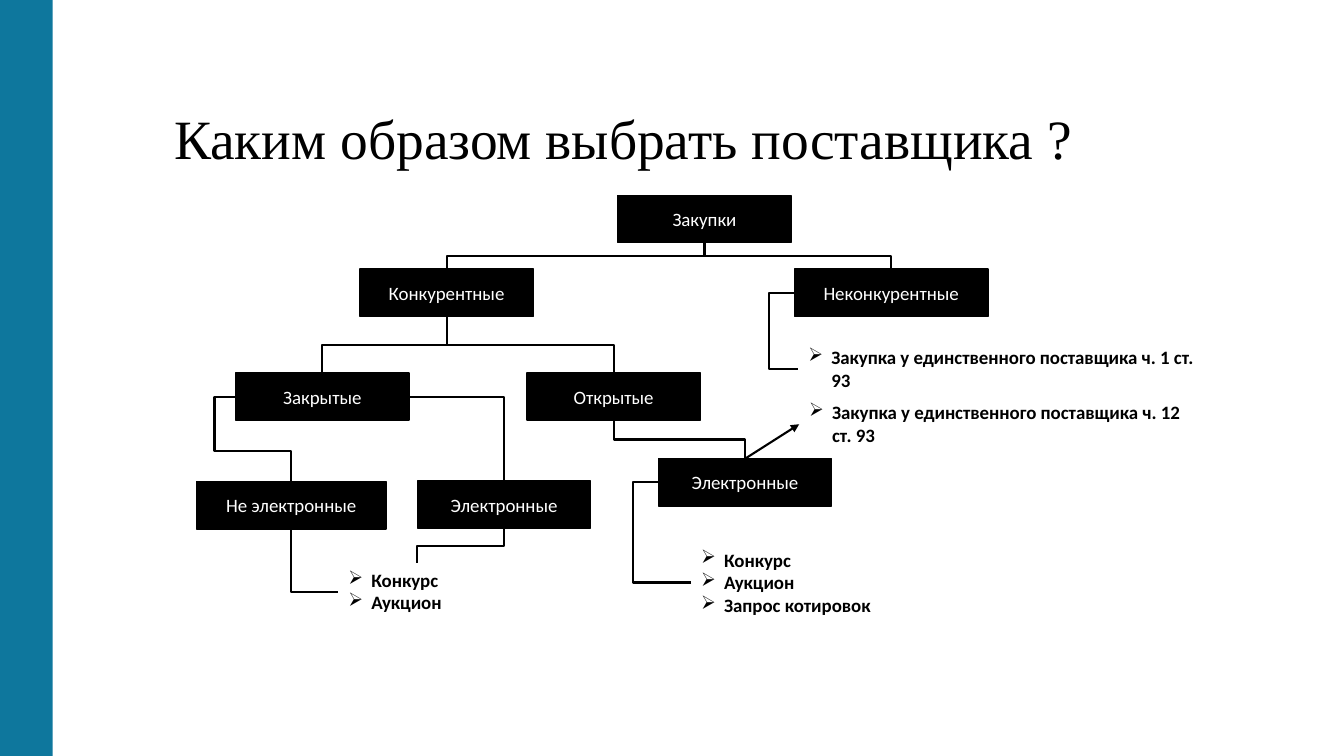
from lxml import etree
from pptx import Presentation
from pptx.dml.color import RGBColor
from pptx.enum.shapes import MSO_CONNECTOR, MSO_SHAPE
from pptx.enum.text import MSO_ANCHOR, PP_ALIGN
from pptx.oxml.ns import qn
from pptx.util import Cm, Pt

BLACK = RGBColor(0x00, 0x00, 0x00)
WHITE = RGBColor(0xFF, 0xFF, 0xFF)
TEAL = RGBColor(0x0E, 0x77, 0x9D)
RECTANGLE = MSO_SHAPE.RECTANGLE
ELBOW, STRAIGHT = MSO_CONNECTOR.ELBOW, MSO_CONNECTOR.STRAIGHT
MIDDLE, CENTER = MSO_ANCHOR.MIDDLE, PP_ALIGN.CENTER

BOX_HEIGHT = 1.19
BULLET_INDENT = Cm(0.58)
TITLE_FONT = {"name": "Times New Roman", "size": Pt(39.6)}
BOX_FONT = {"name": "Calibri", "size": Pt(13.5)}
LIST_FONT = {"name": "Calibri", "size": Pt(13.5), "bold": True}

# key: (text, left, top, width)
BOXES = {
    "purchases": ("Закупки", 15.57, 4.93, 4.37),
    "competitive": ("Конкурентные", 9.07, 6.78, 4.37),
    "noncompetitive": ("Неконкурентные", 20.02, 6.78, 4.88),
    "closed": ("Закрытые", 5.94, 9.4, 4.37),
    "open": ("Открытые", 13.28, 9.4, 4.37),
    "closed paper": ("Не электронные", 4.95, 12.14, 4.78),
    "closed electronic": ("Электронные", 10.52, 12.12, 4.37),
    "open electronic": ("Электронные", 16.59, 11.56, 4.37),
}
# key: (items, left, top, width, height)
LISTS = {
    "closed methods": (["Конкурс", "Аукцион"], 8.53, 14.2, 3.94, 1.42),
    "open methods": (["Конкурс", "Аукцион", "Запрос котировок"], 17.42, 13.69, 7.16, 1.98),
    "part 1": (["Закупка у единственного поставщика ч. 1 ст. 93"], 20.12, 8.59, 10.39, 1.42),
    "part 12": (["Закупка у единственного поставщика ч. 12 ст. 93"], 20.14, 9.98, 10.39, 1.42),
}
# from, side, to, side, preset, leaves vertically, bend positions
ELBOWS = [
    ("purchases", "bottom", "competitive", "top", "bentConnector3", True, [0.5]),
    ("purchases", "bottom", "noncompetitive", "top", "bentConnector3", True, [0.5]),
    ("competitive", "bottom", "closed", "top", "bentConnector3", True, [0.5]),
    ("competitive", "bottom", "open", "top", "bentConnector3", True, [0.5]),
    ("open", "bottom", "open electronic", "top", "bentConnector3", True, [0.5]),
    ("closed electronic", "bottom", "closed methods", "top", "bentConnector3", True, [0.5]),
    ("closed electronic", "top", "closed", "right", "bentConnector2", True, []),
    ("closed paper", "bottom", "closed methods", "left", "bentConnector2", True, []),
    ("closed paper", "top", "closed", "left", "bentConnector4", True, [0.36, 1.38]),
    ("open methods", "left", "open electronic", "left", "bentConnector3", False, [1.76]),
    ("noncompetitive", "left", "part 1", "left", "bentConnector3", False, [-6.35]),
]


def write(paragraph, text, color, font_format):
    run = paragraph.add_run()
    run.text = text
    run.font.color.rgb = color
    for attribute, value in font_format.items():
        setattr(run.font, attribute, value)


def draw_line(kind, start, end, vertical=False):
    """Add a black connector; a vertical one is laid out on its side and turned by 90°."""
    (x1, y1), (x2, y2) = start, end
    if vertical:
        cx, cy, dx, dy = (x1 + x2) / 2, (y1 + y2) / 2, x2 - x1, y2 - y1
        x1, y1, x2, y2 = cx - dy / 2, cy + dx / 2, cx + dy / 2, cy - dx / 2
    line = slide.shapes.add_connector(kind, *(Cm(v) for v in (x1, y1, x2, y2)))
    line.line.color.rgb = BLACK
    line.line.width = Pt(1.5)
    properties = line._element.spPr
    etree.SubElement(properties, qn("a:effectLst"))
    if vertical:
        properties.find(qn("a:xfrm")).set("rot", "5400000")
    return line


prs = Presentation()
prs.slide_width, prs.slide_height = Cm(33.87), Cm(19.05)
slide = prs.slides.add_slide(prs.slide_layouts[6])

side_band = slide.shapes.add_shape(RECTANGLE, 0, 0, Cm(1.33), prs.slide_height)
side_band.shadow.inherit = False
side_band.fill.solid()
side_band.fill.fore_color.rgb = TEAL
side_band.line.fill.background()

title = slide.shapes.add_textbox(Cm(4.14), Cm(2.77), Cm(26.09), Cm(1.7)).text_frame
title.word_wrap = True
title.vertical_anchor = MIDDLE
title.paragraphs[0].line_spacing = 0.8
write(title.paragraphs[0], "Каким образом выбрать поставщика ?", BLACK, TITLE_FONT)

# Points where lines meet the boxes and lists
anchors = {}
areas = {key: (left, top, width, BOX_HEIGHT) for key, (_, left, top, width) in BOXES.items()}
areas.update({key: tuple(area) for key, (_, *area) in LISTS.items()})
for key, (left, top, width, height) in areas.items():
    anchors[key] = {
        "top": (left + width / 2, top),
        "bottom": (left + width / 2, top + height),
        "left": (left, top + height / 2),
        "right": (left + width, top + height / 2),
    }

for source, source_side, target, target_side, preset, vertical, bends in ELBOWS:
    elbow = draw_line(ELBOW, anchors[source][source_side], anchors[target][target_side], vertical)
    geometry = elbow._element.spPr.find(qn("a:prstGeom"))
    geometry.set("prst", preset)
    adjustments = geometry.find(qn("a:avLst"))
    for number, bend in enumerate(bends, 1):
        etree.SubElement(adjustments, qn("a:gd"), name=f"adj{number}",
                         fmla=f"val {round(bend * 100000)}")

arrow = draw_line(STRAIGHT, anchors["open electronic"]["top"], anchors["part 12"]["left"])
etree.SubElement(arrow.line._get_or_add_ln(), qn("a:tailEnd"), type="triangle")

for key, (text, *_) in BOXES.items():
    box = slide.shapes.add_shape(RECTANGLE, *(Cm(v) for v in areas[key]))
    box.shadow.inherit = False
    box.fill.solid()
    box.fill.fore_color.rgb = BLACK
    box.line.color.rgb = BLACK
    box.line.width = Pt(1)
    box.text_frame.word_wrap = True
    box.text_frame.vertical_anchor = MIDDLE
    box.text_frame.paragraphs[0].alignment = CENTER
    write(box.text_frame.paragraphs[0], text, WHITE, BOX_FONT)

for key, (items, *_) in LISTS.items():
    frame = slide.shapes.add_textbox(*(Cm(v) for v in areas[key])).text_frame
    frame.word_wrap = True
    for index, item in enumerate(items):
        paragraph = frame.add_paragraph() if index else frame.paragraphs[0]
        write(paragraph, item, BLACK, LIST_FONT)
        properties = paragraph._p.get_or_add_pPr()
        properties.set("marL", str(BULLET_INDENT))
        properties.set("indent", str(-BULLET_INDENT))
        etree.SubElement(properties, qn("a:buChar"), char="➢")

prs.save("out.pptx")
